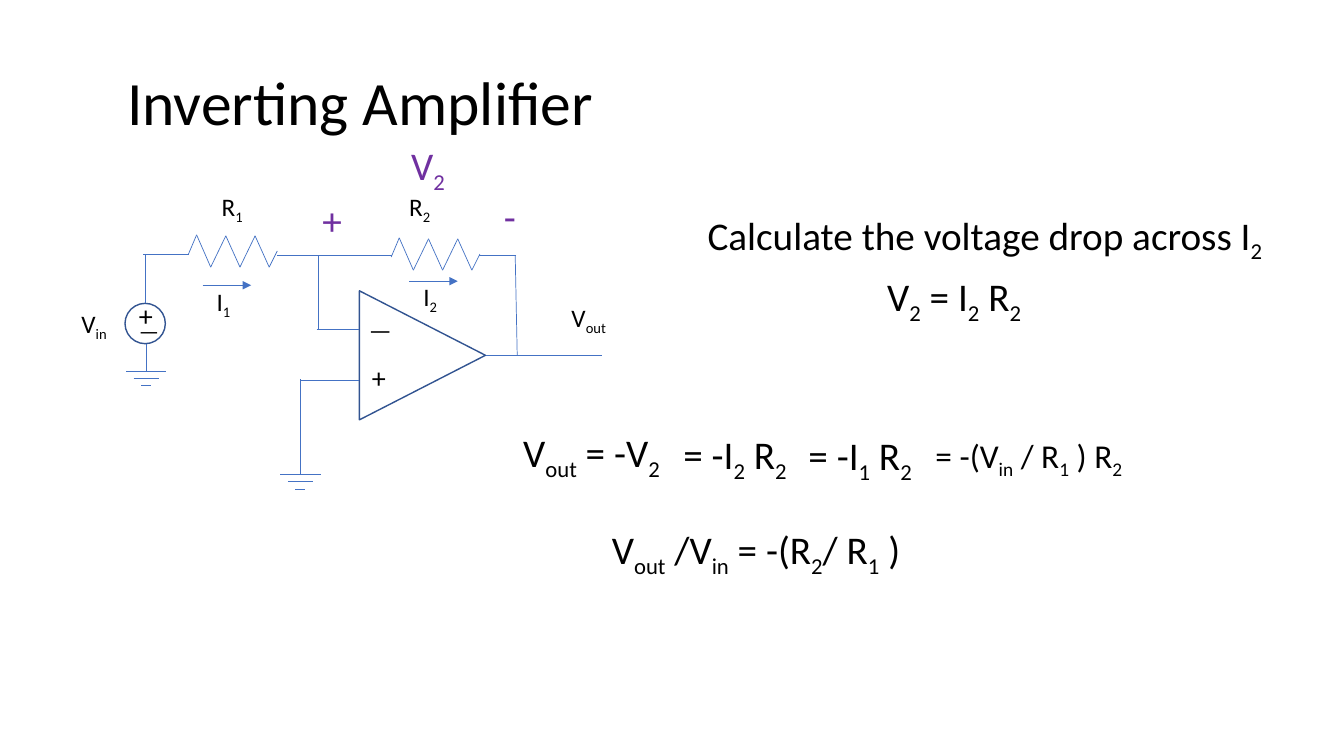
from itertools import pairwise
from lxml.etree import SubElement as Sub
from pptx import Presentation
from pptx.dml.color import RGBColor
from pptx.enum.shapes import MSO_CONNECTOR as Link, MSO_SHAPE as Form
from pptx.enum.text import MSO_ANCHOR as Anchor, PP_ALIGN as Align
from pptx.oxml.ns import qn
from pptx.util import Inches, Pt

BLACK = RGBColor(0x00, 0x00, 0x00)
WIRE = RGBColor(0x44, 0x72, 0xC4)
EDGE = RGBColor(0x32, 0x54, 0x91)
PURPLE = RGBColor(0x70, 0x30, 0xA0)
FONT = "Calibri"

deck = Presentation()
deck.slide_width, deck.slide_height = Inches(13.33), Inches(7.5)
slide = deck.slides.add_slide(deck.slide_layouts[5])
shapes = slide.shapes


def wire(x1, y1, x2, y2, arrow=False):
    line = shapes.add_connector(Link.STRAIGHT, Inches(x1), Inches(y1), Inches(x2), Inches(y2))
    line.line.color.rgb = WIRE
    line.line.width = Pt(0.5)
    if arrow:
        Sub(line.line._get_or_add_ln(), qn("a:tailEnd"), type="triangle")
    Sub(line._element.spPr, qn("a:effectLst"))


def label(text, x, y, w, h, size, color=BLACK, para={}):
    """Write text; every second part between bars is a subscript."""
    box = shapes.add_textbox(Inches(x), Inches(y), Inches(w), Inches(h))
    frame = box.text_frame
    frame.word_wrap = True
    first = frame.paragraphs[0]
    for key, value in para.items():
        setattr(first, key, value)
    for i, part in enumerate(text.split("|")):
        if not part:
            continue
        run = first.add_run()
        run.text = part
        for key, value in {"name": FONT, "size": Pt(size)}.items():
            setattr(run.font, key, value)
        run.font.color.rgb = color
        if i % 2:
            run._r.get_or_add_rPr().set("baseline", "-25000")


# Title
title = shapes.title
place = {"left": 1.16, "top": 0.32, "width": 11.5, "height": 1.45}
for key, value in place.items():
    setattr(title, key, Inches(value))
title.text_frame.text = "Inverting Amplifier"
title.text_frame.vertical_anchor = Anchor.MIDDLE
head = title.text_frame.paragraphs[0]
for key, value in {"alignment": Align.LEFT, "line_spacing": 0.9}.items():
    setattr(head, key, value)
for key, value in {"name": FONT, "size": Pt(44)}.items():
    setattr(head.runs[0].font, key, value)
head.runs[0].font.color.rgb = BLACK

# Amplifier and voltage source
for form, x, y, w, h, turn in [
    (Form.ISOSCELES_TRIANGLE, 3.55, 2.9, 1.28, 1.25, 90),
    (Form.OVAL, 1.24, 3.01, 0.4, 0.4, 0),
]:
    part = shapes.add_shape(form, Inches(x), Inches(y), Inches(w), Inches(h))
    part.rotation = turn
    part.shadow.inherit = False
    part.fill.background()
    part.line.color.rgb = EDGE
    part.line.width = Pt(1)

# Wires
for ends in [
    (3.14, 3.27, 3.56, 3.27),  # inverting input
    (3.16, 3.27, 3.16, 2.53),
    (2.98, 3.77, 3.56, 3.77),  # grounded input
    (2.98, 4.71, 2.98, 3.76),
    (4.82, 3.53, 5.97, 3.53),  # output
    (5.13, 3.53, 5.11, 2.53),  # feedback
    (5.12, 2.53, 4.75, 2.53),
    (2.75, 2.53, 3.89, 2.53),
    (1.44, 3.01, 1.44, 2.52),  # source
    (1.87, 2.52, 1.42, 2.52),
    (1.45, 3.68, 1.45, 3.41),
]:
    wire(*ends)

# Resistors
ZIGZAG = [(0, 0), (0.08, -0.19), (0.22, 0.13), (0.37, -0.18),
          (0.51, 0.13), (0.66, -0.18), (0.8, 0.13), (0.88, -0.03)]
for x, y in [(1.87, 2.52), (3.88, 2.55)]:
    for (ax, ay), (bx, by) in pairwise(ZIGZAG):
        wire(x + ax, y + ay, x + bx, y + by)

# Grounds
for x, y in [(1.45, 3.68), (2.98, 4.71)]:
    for i, half in enumerate([0.2, 0.125, 0.05]):
        wire(x - half, y + 0.07 * i, x + half, y + 0.07 * i)

# Current arrows
for x, y in [(2.01, 2.83), (4.06, 2.79)]:
    wire(x, y, x + 0.48, y, arrow=True)

# Polarity signs
for sign, x, y, h, size in [
    ("—", 3.56, 3.07, 0.4, 18),
    ("+", 3.59, 3.53, 0.44, 20),
    ("+", 1.28, 2.91, 0.44, 20),
    ("—", 1.28, 3.1, 0.37, 16),
]:
    label(sign, x, y, 0.34, h, size)

# Part names
for name, x, y in [
    ("V|in", 0.71, 3.01), ("V|out", 5.57, 2.95),
    ("R|1", 2.1, 1.85), ("R|2", 3.96, 1.85),
    ("I|1", 2.05, 2.79), ("I|2", 4.1, 2.74),
]:
    label(name, x, y, 0.57, 0.4, 18)

# Voltage drop and equations
BODY = {"line_spacing": 0.9, "space_before": Pt(10)}
for text, x, y, w, h, color in [
    ("V|2", 3.98, 1.36, 0.72, 0.69, PURPLE),
    ("+", 3.1, 1.95, 0.43, 0.55, PURPLE),
    ("-", 4.9, 1.91, 0.43, 0.55, PURPLE),
    ("Calculate the voltage drop across I|2", 6.92, 2.05, 6.2, 0.69, BLACK),
    ("V|2| = I|2| R|2", 8.7, 2.66, 2.05, 0.69, BLACK),
    ("V|out| = -V|2", 5.09, 4.21, 2.05, 0.69, BLACK),
    ("= -I|2| R|2", 6.68, 4.23, 1.34, 0.69, BLACK),
    ("= -I|1| R|2", 7.92, 4.24, 1.34, 0.69, BLACK),
    ("V|out| /V|in| = -(R|2|/ R|1| )", 5.97, 5.17, 3.58, 0.69, BLACK),
]:
    label(text, x, y, w, h, 28, color, BODY)
label("= -(V|in| / R|1| ) R|2", 9.18, 4.31, 2.25, 0.69, 23.8,
      para=BODY | {"line_spacing": 0.8})

deck.save("out.pptx")
